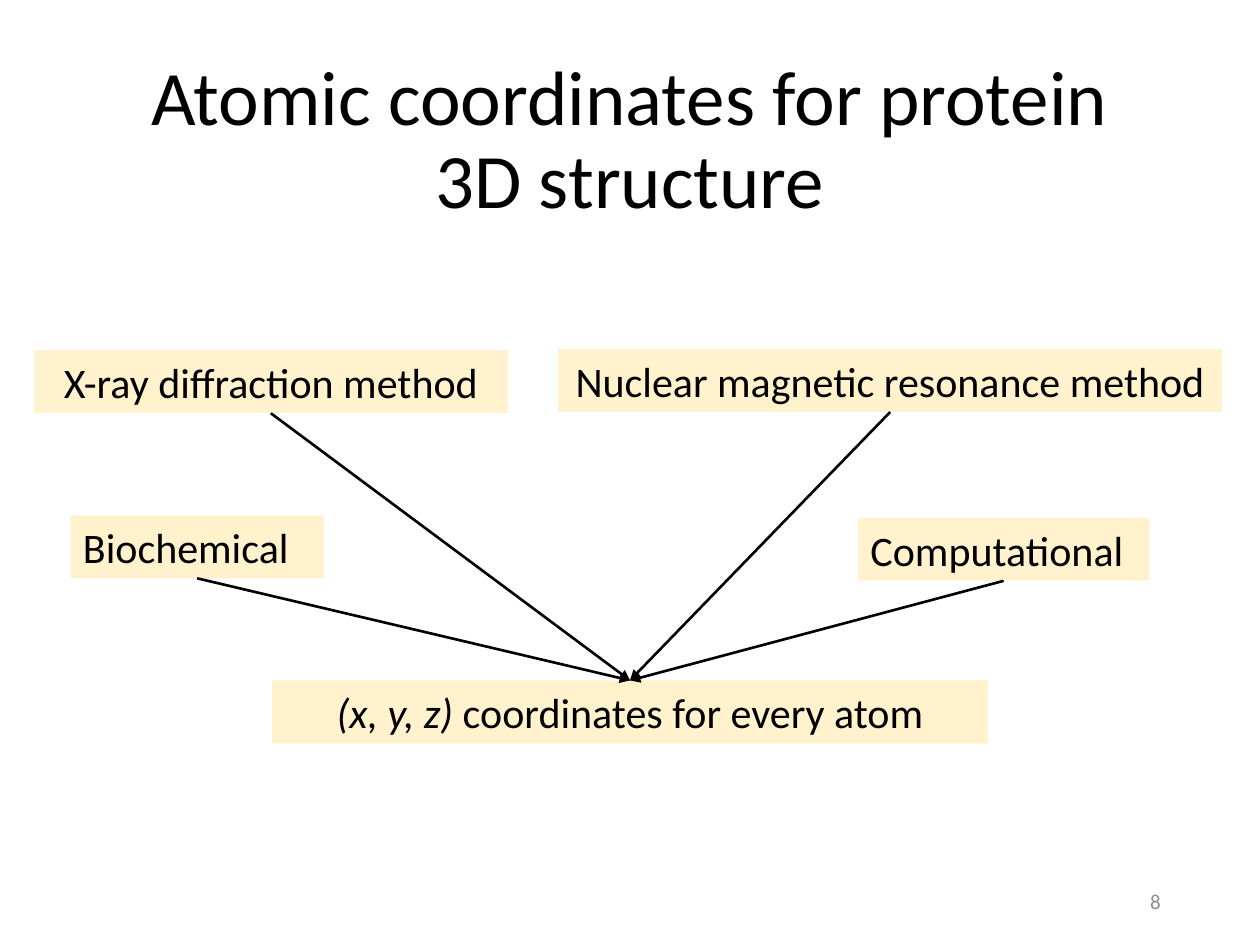
import dataclasses
import typing

import pptx
import pptx.dml.color
import pptx.enum.shapes
import pptx.enum.text
import pptx.oxml
import pptx.oxml.ns
import pptx.util

WIDTH, HEIGHT = pptx.util.Inches(10), pptx.util.Inches(7.5)
COLUMNS, ROWS = 100, 75
BOX_ROWS = 5
BLACK, GREY, CREAM = "000000", "8C8C8C", "FFF2CC"
ALIGN = pptx.enum.text.PP_ALIGN
ANCHOR = pptx.enum.text.MSO_ANCHOR
BOX_TEXT = {"name": "Calibri", "size": pptx.util.Pt(24)}


@dataclasses.dataclass
class Span:
    """A run of text with one slant."""
    text: str
    italic: bool = False


@dataclasses.dataclass
class Label:
    """A filled box placed by grid column and row."""
    spans: list[Span]
    column: float
    row: float
    columns: float
    align: typing.Any = ALIGN.CENTER


RESULT = Label([Span("(x, y, z)", True), Span(" coordinates for every atom")], 21.6, 54, 56.8)
METHODS = [
    Label([Span("X-ray diffraction method")], 2.7, 27.8, 37.6),
    Label([Span("Nuclear magnetic resonance method")], 44.3, 27.7, 52.7),
    Label([Span("Biochemical")], 5.6, 40.9, 20.1, ALIGN.LEFT),
    Label([Span("Computational")], 68.1, 41.1, 23.1, ALIGN.LEFT),
]


def color(value: str) -> pptx.dml.color.RGBColor:
    """Turn a hex string into a colour."""
    return pptx.dml.color.RGBColor.from_string(value)


def place(column: float, row: float, columns: float, rows: float) -> list[int]:
    """Turn grid units into left, top, width and height."""
    across, down = WIDTH / COLUMNS, HEIGHT / ROWS
    return [round(n) for n in (column * across, row * down, columns * across, rows * down)]


def apply(target: typing.Any, values: dict[str, typing.Any]) -> None:
    """Set every named attribute on the target."""
    for name, value in values.items():
        setattr(target, name, value)


def write(box: typing.Any, spans: list[Span], font: dict, para_format: dict,
          anchor: typing.Any, ink: str = BLACK) -> None:
    """Fill a box with one formatted paragraph."""
    apply(box.text_frame, {"word_wrap": True, "vertical_anchor": anchor})
    para = box.text_frame.paragraphs[0]
    apply(para, para_format)
    for span in spans:
        run = para.add_run()
        run.text = span.text
        apply(run.font, {**font, "italic": span.italic})
        run.font.color.rgb = color(ink)


def draw_label(page: typing.Any, label: Label) -> typing.Any:
    """Draw a filled label and return its shape."""
    box = page.shapes.add_shape(
        pptx.enum.shapes.MSO_SHAPE.RECTANGLE,
        *place(label.column, label.row, label.columns, BOX_ROWS))
    box.shadow.inherit = False
    box.fill.solid()
    box.fill.fore_color.rgb = color(CREAM)
    box.line.fill.background()
    write(box, label.spans, BOX_TEXT, {"alignment": label.align}, ANCHOR.TOP)
    return box


def draw_arrow(page: typing.Any, source: typing.Any, target: typing.Any) -> None:
    """Link the bottom of one box to the top of another."""
    arrow = page.shapes.add_connector(pptx.enum.shapes.MSO_CONNECTOR.STRAIGHT, 0, 0, 0, 0)
    arrow.begin_connect(source, 2)
    arrow.end_connect(target, 0)
    arrow.line.color.rgb = color(BLACK)
    arrow.line.width = pptx.util.Pt(1.5)
    namespace = pptx.oxml.ns.nsdecls("a")
    head = pptx.oxml.parse_xml(f'<a:tailEnd {namespace} type="triangle"/>')
    arrow.line._get_or_add_ln().append(head)
    arrow._element.spPr.append(pptx.oxml.parse_xml(f"<a:effectLst {namespace}/>"))


def main() -> None:
    """Build and save the slide."""
    deck = pptx.Presentation()
    apply(deck, {"slide_width": WIDTH, "slide_height": HEIGHT})
    page = deck.slides.add_slide(deck.slide_layouts[6])
    title = page.shapes.add_textbox(*place(6.9, 4, 86.2, 14.5))
    write(title, [Span("Atomic coordinates for protein 3D structure")],
          {"name": "Calibri", "size": pptx.util.Pt(44)},
          {"alignment": ALIGN.CENTER, "line_spacing": 0.9}, ANCHOR.MIDDLE)
    number = page.shapes.add_textbox(*place(70.6, 69.5, 22.5, 4))
    write(number, [Span("8")], {"name": "Calibri", "size": pptx.util.Pt(12)},
          {"alignment": ALIGN.RIGHT}, ANCHOR.MIDDLE, GREY)
    result = draw_label(page, RESULT)
    methods = [draw_label(page, label) for label in METHODS]
    for method in methods:
        draw_arrow(page, method, result)
    deck.save("out.pptx")


if __name__ == "__main__":
    main()
